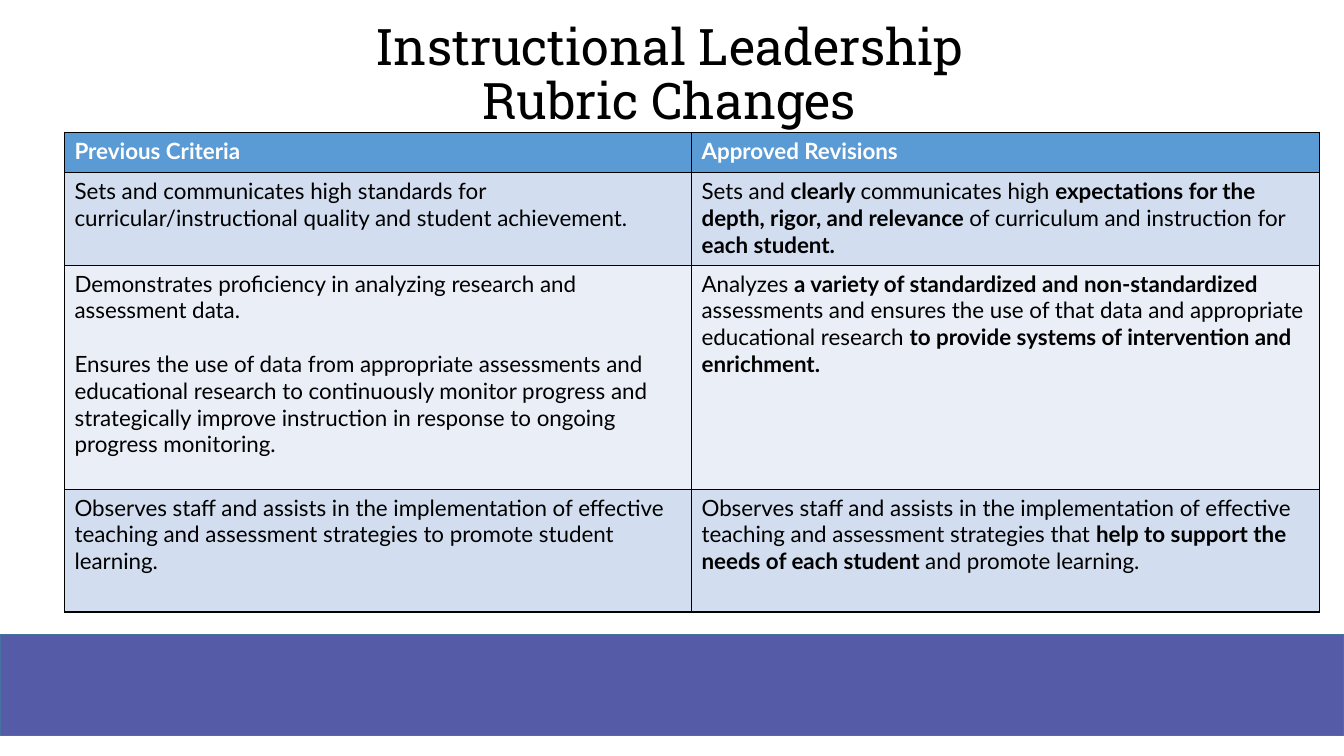
from lxml.etree import SubElement
from pptx import Presentation
from pptx.dml.color import RGBColor
from pptx.enum.shapes import MSO_SHAPE
from pptx.enum.text import MSO_ANCHOR, PP_ALIGN
from pptx.oxml.ns import qn
from pptx.util import Pt

# Text between asterisks is bold; each cell is a list of paragraphs.
TITLE_LINES = ["Instructional Leadership", "Rubric Changes"]
ROWS = [
    (["*Previous Criteria*"], ["*Approved Revisions*"]),
    (["Sets and communicates high standards for curricular/instructional "
      "quality and student achievement."],
     ["Sets and *clearly *communicates high *expectations for the depth, rigor, "
      "and relevance *of curriculum and instruction for *each student.*"]),
    (["Demonstrates proficiency in analyzing research and assessment data.",
      "Ensures the use of data from appropriate assessments and educational "
      "research to continuously monitor progress and strategically improve "
      "instruction in response to ongoing progress monitoring."],
     ["Analyzes *a variety of standardized and non-standardized *assessments "
      "and ensures the use of that data and appropriate educational research "
      "*to provide systems of intervention and enrichment.*"]),
    (["Observes staff and assists in the implementation of effective teaching "
      "and assessment strategies to promote student learning."],
     ["Observes staff and assists in the implementation of effective teaching "
      "and assessment strategies that *help to support the needs of each "
      "student *and promote learning."]),
]

BLACK = RGBColor(0x00, 0x00, 0x00)
WHITE = RGBColor(0xFF, 0xFF, 0xFF)
HEADER_BLUE = RGBColor(0x5B, 0x9B, 0xD5)
BAND_DARK = RGBColor(0xD2, 0xDE, 0xEF)
BAND_LIGHT = RGBColor(0xEA, 0xEF, 0xF7)
FOOTER_FILL = RGBColor(0x56, 0x5B, 0xA7)
FOOTER_LINE = RGBColor(0x43, 0x73, 0x9E)

SLIDE_W, SLIDE_H = 960, 540
LEFT = 46.08
TABLE_TOP = 94.4
COL_WIDTHS = [447.9, 448.5]
ROW_HEIGHTS = [28.8, 66.2, 160, 87.8]
PARAGRAPH_GAP = 19.2


def add_run(p, text, color, **font_format):
    r = p.add_run()
    r.text = text
    r.font.color.rgb = color
    for name, value in font_format.items():
        setattr(r.font, name, value)


def add_footer_band(s):
    sp = s.shapes.add_shape(MSO_SHAPE.RECTANGLE, Pt(0), Pt(453.2), Pt(SLIDE_W), Pt(72))
    sp.shadow.inherit = False
    sp.fill.solid()
    sp.fill.fore_color.rgb = FOOTER_FILL
    sp.line.color.rgb = FOOTER_LINE
    sp.line.width = Pt(1)


def add_title(s):
    tf = s.shapes.add_textbox(Pt(LEFT), Pt(14.4), Pt(864), Pt(80)).text_frame
    tf.word_wrap = True
    tf.vertical_anchor = MSO_ANCHOR.MIDDLE
    p = tf.paragraphs[0]
    p.alignment = PP_ALIGN.CENTER
    p.line_spacing = 0.9
    for i, line in enumerate(TITLE_LINES):
        if i:
            p.add_line_break()
        add_run(p, line, BLACK, name="Roboto Slab", size=Pt(36))


def set_borders(cell):
    """Put a 1 pt black line on all four sides; call before setting the fill."""
    tcPr = cell._tc.get_or_add_tcPr()
    for side in ("a:lnL", "a:lnR", "a:lnT", "a:lnB"):
        ln = SubElement(tcPr, qn(side), w=str(Pt(1)))
        SubElement(SubElement(ln, qn("a:solidFill")), qn("a:srgbClr"), val=str(BLACK))


def fill_cell(cell, paragraphs, fill, color):
    set_borders(cell)
    cell.fill.solid()
    cell.fill.fore_color.rgb = fill
    tf = cell.text_frame
    for i, text in enumerate(paragraphs):
        p = tf.add_paragraph() if i else tf.paragraphs[0]
        if i:
            p.space_before = Pt(PARAGRAPH_GAP)
        for j, part in enumerate(text.split("*")):
            if part:
                add_run(p, part, color, name="Lato", size=Pt(16), bold=j % 2 == 1)


def add_rubric(s):
    table = s.shapes.add_table(
        len(ROWS), len(COL_WIDTHS), Pt(LEFT), Pt(TABLE_TOP),
        Pt(sum(COL_WIDTHS)), Pt(sum(ROW_HEIGHTS))).table
    for column, width in zip(table.columns, COL_WIDTHS):
        column.width = Pt(width)
    for i, (row, height) in enumerate(zip(table.rows, ROW_HEIGHTS)):
        row.height = Pt(height)
        fill = (BAND_DARK if i % 2 else BAND_LIGHT) if i else HEADER_BLUE
        for cell, paragraphs in zip(row.cells, ROWS[i]):
            fill_cell(cell, paragraphs, fill, BLACK if i else WHITE)


def main():
    prs = Presentation()
    prs.slide_width, prs.slide_height = Pt(SLIDE_W), Pt(SLIDE_H)
    s = prs.slides.add_slide(prs.slide_layouts[6])
    add_footer_band(s)
    add_title(s)
    add_rubric(s)
    prs.save("out.pptx")


if __name__ == "__main__":
    main()
